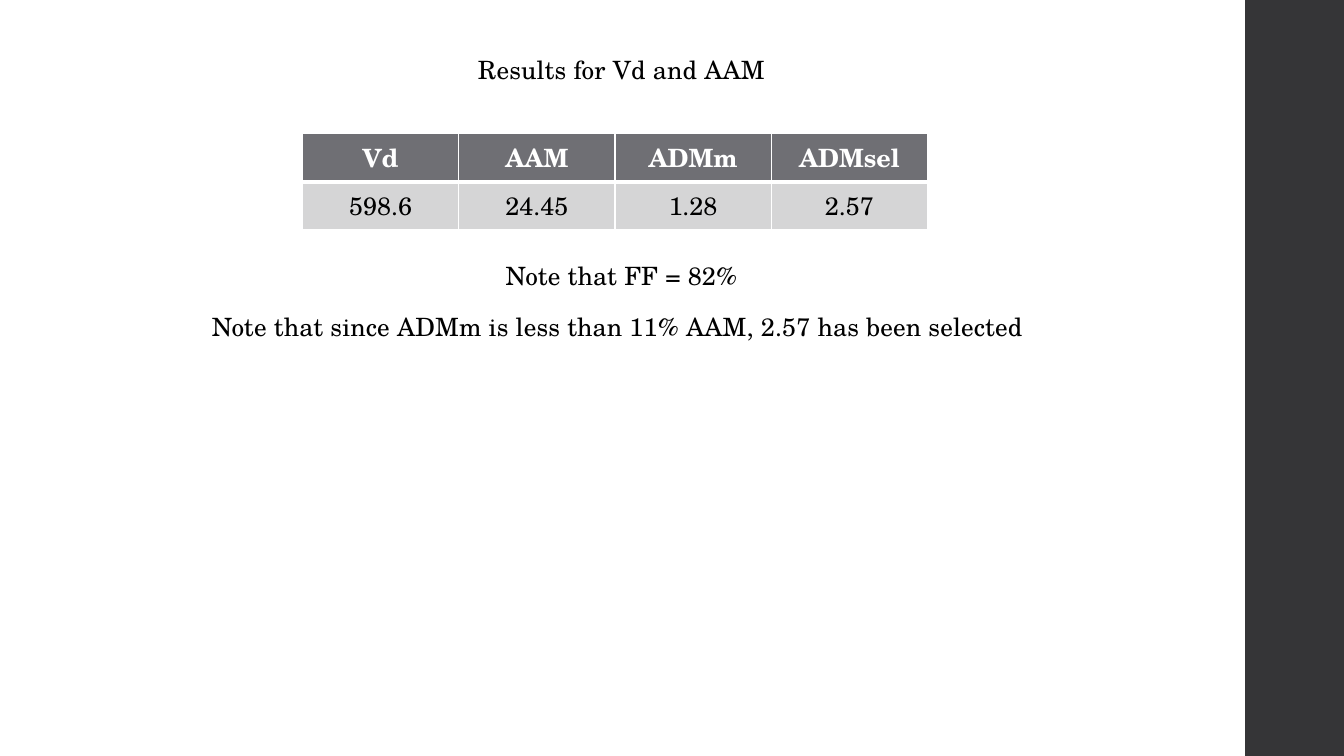
from pptx import Presentation, util as u
from pptx.dml.color import RGBColor
from pptx.enum import shapes, text
from pptx.oxml.ns import qn
from lxml import etree

WHITE = RGBColor(0xFF, 0xFF, 0xFF)
BLACK = RGBColor(0, 0, 0)
DARK = RGBColor(0x35, 0x35, 0x37)
HEAD = RGBColor(0x6F, 0x6F, 0x74)
PALE = RGBColor(0xD5, 0xD5, 0xD6)


class Page:
    """Hold the text style and the current slide, and draw its elements."""

    def __init__(self, slide, font, size):
        self.slide = slide
        self.font = font
        self.size = u.Pt(size)

    def label(self, para, words, color=BLACK, bold=False, space=0):
        para.alignment = text.PP_ALIGN.CENTER
        run = para.add_run()
        run.text = words
        run.font.name = self.font
        run.font.size = self.size
        run.font.bold = bold
        run.font.color.rgb = color
        if space:
            run._r.get_or_add_rPr().set("spc", str(space))

    def lines(self, shape, lines):
        frame = shape.text_frame
        frame.word_wrap = True
        frame.auto_size = text.MSO_AUTO_SIZE.NONE
        frame.vertical_anchor = text.MSO_ANCHOR.TOP
        frame.margin_top = frame.margin_bottom = 0
        for i, line in enumerate(lines):
            para = frame.add_paragraph() if i else frame.paragraphs[0]
            para.line_spacing = 0.95
            para.space_before = u.Pt(0)
            para.space_after = u.Pt(16)
            self.label(para, line, space=10)

    def title(self, words, left, top, width, height):
        shape = self.slide.shapes.title
        shape.left, shape.top = u.Inches(left), u.Inches(top)
        shape.width, shape.height = u.Inches(width), u.Inches(height)
        self.lines(shape, [words])

    def notes(self, lines, left, top, width, height):
        box = self.slide.shapes.add_textbox(
            u.Inches(left), u.Inches(top), u.Inches(width), u.Inches(height))
        self.lines(box, lines)

    def band(self, left, top, width, height, color):
        shape = self.slide.shapes.add_shape(
            shapes.MSO_SHAPE.RECTANGLE, u.Inches(left), u.Inches(top),
            u.Inches(width), u.Inches(height))
        shape.shadow.inherit = False
        shape.fill.solid()
        shape.fill.fore_color.rgb = color
        shape.line.fill.background()

    def edge(self, cell, side, width):
        props = cell._tc.get_or_add_tcPr()
        line = etree.SubElement(props, qn("a:ln" + side), w=str(u.Pt(width)))
        paint = etree.SubElement(line, qn("a:solidFill"))
        etree.SubElement(paint, qn("a:srgbClr"), val=str(WHITE))

    def table(self, rows, left, top, width, height):
        grid = self.slide.shapes.add_table(
            len(rows), len(rows[0]), u.Inches(left), u.Inches(top),
            u.Inches(width), u.Inches(height)).table
        for r, row in enumerate(rows):
            for c, words in enumerate(row):
                cell = grid.cell(r, c)
                first = r == 0
                for side in "LRTB":
                    thick = (first and side == "B") or (r == 1 and side == "T")
                    self.edge(cell, side, 3 if thick else 1)
                cell.fill.solid()
                cell.fill.fore_color.rgb = HEAD if first else PALE
                cell.vertical_anchor = text.MSO_ANCHOR.MIDDLE
                self.label(cell.text_frame.paragraphs[0], words,
                           WHITE if first else BLACK, first)


def main():
    deck = Presentation()
    deck.slide_width = u.Inches(13.33)
    deck.slide_height = u.Inches(7.5)
    page = Page(deck.slides.add_slide(deck.slide_layouts[5]),
                "TeX Gyre Schola", 18)
    page.band(12.35, 0, 1, 7.5, DARK)
    page.title("Results for Vd and AAM", 0, 0.56, 12.33, 0.4)
    page.table([["Vd", "AAM", "ADMm", "ADMsel"],
                ["598.6", "24.45", "1.28", "2.57"]], 3, 1.32, 6.2, 0.94)
    page.notes(["Note that FF = 82%",
                "Note that since ADMm is less than 11% AAM, "
                "2.57 has been selected "], 0, 2.6, 12.33, 1)
    deck.save("out.pptx")


if __name__ == "__main__":
    main()
